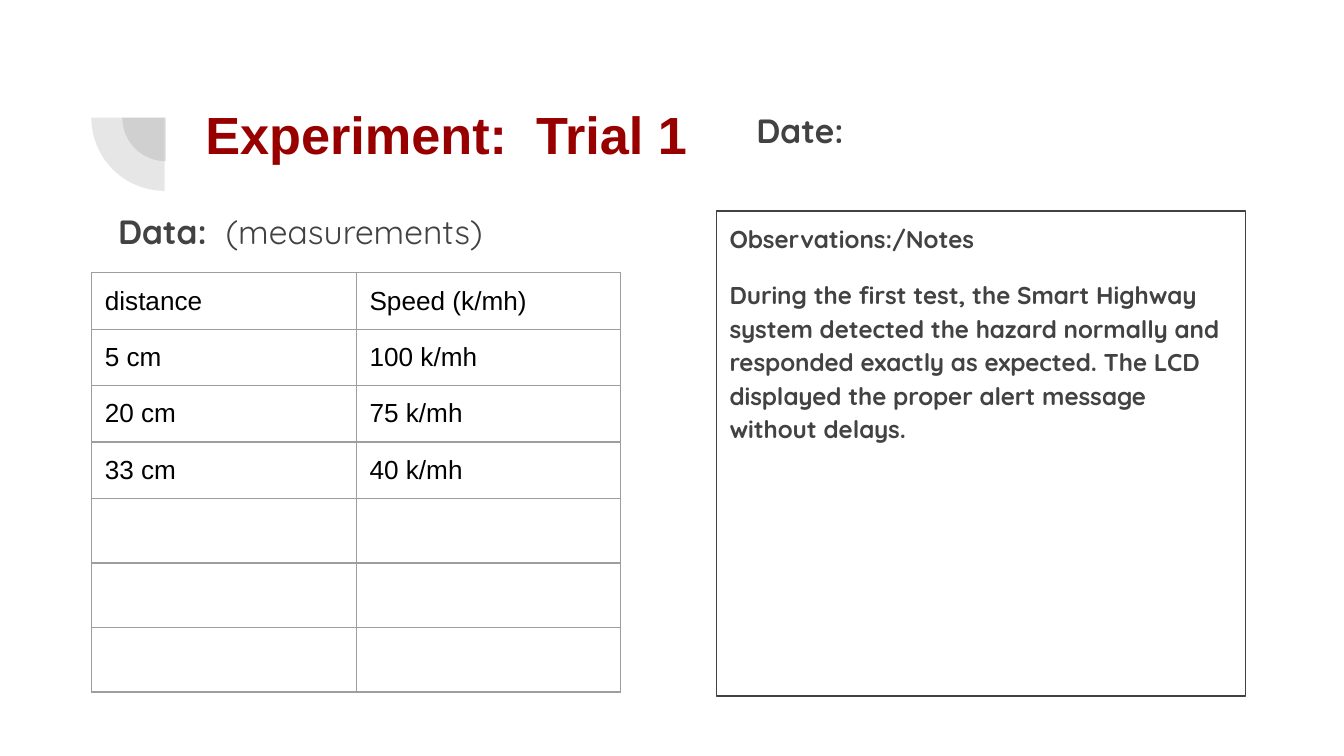
from pptx import Presentation
from pptx.dml.color import RGBColor
from pptx.enum.shapes import MSO_SHAPE as SHAPE
from pptx.enum.text import MSO_ANCHOR as ANCHOR, PP_ALIGN as ALIGN
from pptx.oxml import parse_xml
from pptx.oxml.ns import nsdecls
from pptx.util import Inches, Pt

COLORS = {"title": "980000", "ink": "424242", "cell": "000000", "grid": "9E9E9E"}


def style_run(run, size, color, bold=False, font="Quicksand"):
    run.font.size = Pt(size)
    run.font.name = font
    run.font.bold = bold
    run.font.color.rgb = RGBColor.from_string(COLORS[color])


def add_text(left, top, width, height, runs, anchor=ANCHOR.TOP):
    """Add a one-line text box; each run is (text, style arguments)."""
    box = page.shapes.add_textbox(Inches(left), Inches(top), Inches(width), Inches(height))
    frame = box.text_frame
    frame.word_wrap = True
    frame.vertical_anchor = anchor
    frame.margin_top = frame.margin_bottom = Inches(0.1)
    for text, style in runs:
        run = frame.paragraphs[0].add_run()
        run.text = text
        style_run(run, *style)


deck = Presentation()
deck.slide_width = Inches(10)
deck.slide_height = Inches(10) * 9 // 16
page = deck.slides.add_slide(deck.slide_layouts[6])

# Translucent quarter circles beside the title
for left, top, size in [(0.91, 0.55, 0.65), (0.68, 0.33, 1.09)]:
    quarter = page.shapes.add_shape(SHAPE.PIE, Inches(left), Inches(top), Inches(size), Inches(size))
    quarter.adjustments[0], quarter.adjustments[1] = 108, 162
    quarter.rotation = 270
    quarter.shadow.inherit = False
    quarter.line.fill.background()
    quarter.fill.solid()
    quarter.fill.fore_color.rgb = RGBColor.from_string(COLORS["ink"])
    color = quarter.fill._xPr.find(".//{*}srgbClr")
    color.append(parse_xml(f'<a:alpha {nsdecls("a")} val="13000"/>'))

# Headings
add_text(1.43, 0.64, 4.05, 0.71,
         [("Experiment:  Trial 1", (28, "title", True, "Arial"))], ANCHOR.MIDDLE)
add_text(0.78, 1.47, 4.22, 0.45,
         [("Data:  ", (18, "ink", True)), ("(measurements)", (18, "ink"))])
add_text(5.53, 0.72, 4.22, 0.45, [("Date:", (18, "ink", True))])

# Observations panel
panel = page.shapes.add_shape(SHAPE.RECTANGLE, Inches(5.33), Inches(1.57), Inches(3.94), Inches(3.61))
panel.shadow.inherit = False
panel.fill.background()
panel.line.color.rgb = RGBColor.from_string(COLORS["ink"])
panel.line.width = Pt(0.75)
frame = panel.text_frame
frame.word_wrap = True
frame.vertical_anchor = ANCHOR.TOP
frame.margin_left = frame.margin_right = frame.margin_top = frame.margin_bottom = Inches(0.1)
frame.text = (
    "Observations:/Notes\n"
    "During the first test, the Smart Highway system detected the hazard normally "
    "and responded exactly as expected. The LCD displayed the proper alert message "
    "without delays."
)
for para in frame.paragraphs:
    para.alignment = ALIGN.LEFT
    style_run(para.runs[0], 13, "ink", True)
frame.paragraphs[1].line_spacing = 1.15
frame.paragraphs[1].space_before = Pt(12)

# Measurements table, with three rows left empty
measurements = [
    ("distance", "Speed (k/mh)"),
    ("5 cm", "100 k/mh"),
    ("20 cm", "75 k/mh"),
    ("33 cm", "40 k/mh"),
] + [("", "")] * 3
table = page.shapes.add_table(len(measurements), 2, Inches(0.68), Inches(2.03),
                              Inches(3.94), Inches(3.12)).table
table.first_row = table.horz_banding = False
for column in table.columns:
    column.width = Inches(1.97)
for row, texts in zip(table.rows, measurements):
    row.height = Inches(0.42 if texts[0] else 0.48)
    for cell, text in zip(row.cells, texts):
        cell.margin_left = cell.margin_right = cell.margin_top = Inches(0.1)
        cell.margin_bottom = Inches(0.08)
        if text:
            cell.text_frame.text = text
            style_run(cell.text_frame.paragraphs[0].runs[0], 14, "cell", font="Arial")
        properties = cell._tc.get_or_add_tcPr()
        for side in "LRTB":
            properties.append(parse_xml(
                f'<a:ln{side} {nsdecls("a")} w="{Pt(0.75)}"><a:solidFill>'
                f'<a:srgbClr val="{COLORS["grid"]}"/></a:solidFill></a:ln{side}>'))
        cell.fill.background()

deck.save("out.pptx")
